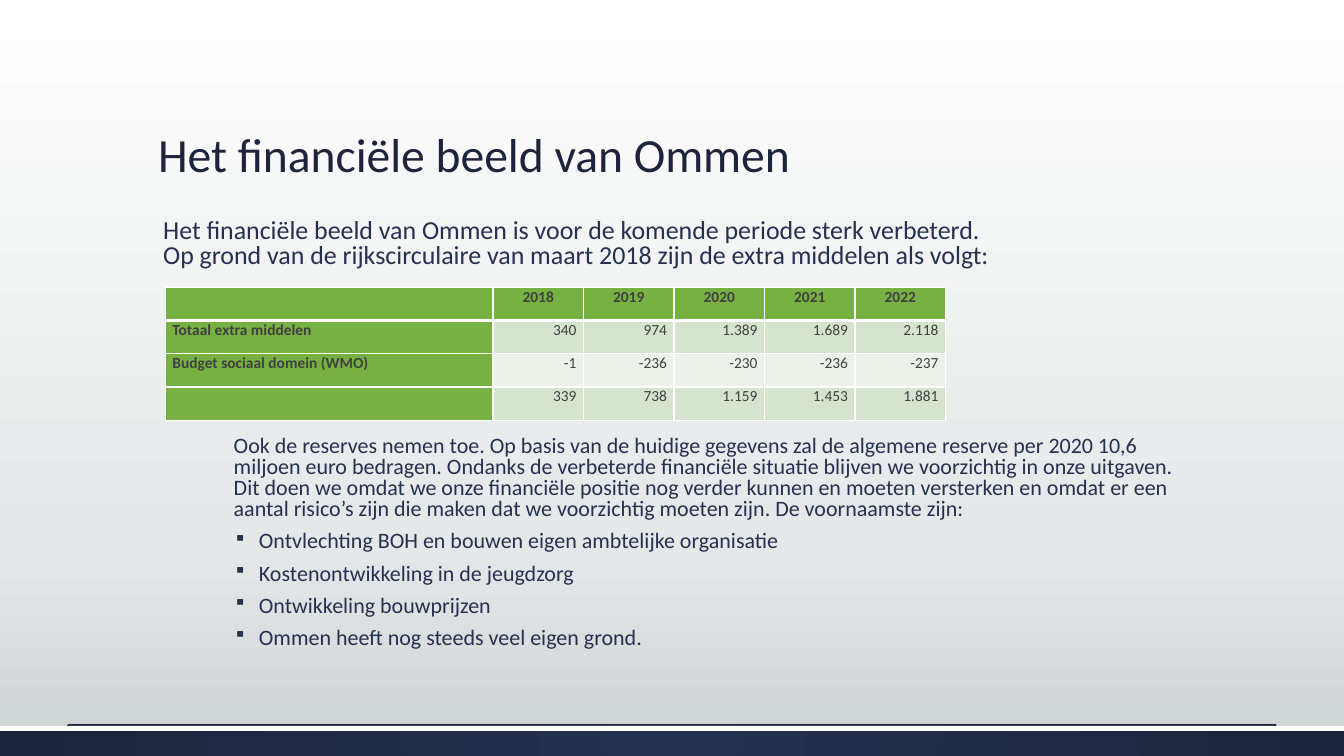
from lxml import etree
from pptx import Presentation
from pptx.dml.color import RGBColor
from pptx.enum.shapes import MSO_CONNECTOR, MSO_SHAPE
from pptx.enum.text import MSO_ANCHOR, PP_ALIGN
from pptx.oxml import parse_xml
from pptx.oxml.ns import nsdecls, qn
from pptx.util import Inches, Pt

NAVY = RGBColor(0x1D, 0x24, 0x3C)
BLUE = RGBColor(0x26, 0x30, 0x50)
WHITE = RGBColor(0xFF, 0xFF, 0xFF)
MIST = RGBColor(0xE5, 0xE8, 0xE8)
SILVER = RGBColor(0xCD, 0xD2, 0xD2)
GREEN = RGBColor(0x77, 0xB1, 0x42)
BAND_DARK = RGBColor(0xD6, 0xE4, 0xCF)
BAND_LIGHT = RGBColor(0xEC, 0xF2, 0xE9)
GREY = RGBColor(0x40, 0x40, 0x40)

LINEAR_DOWN = '<a:lin ang="5400000" scaled="0"/>'
RADIAL = '<a:path path="circle"><a:fillToRect l="50000" t="50000" r="50000" b="50000"/></a:path>'

INTRO = ("Het financiële beeld van Ommen is voor de komende periode sterk verbeterd.\v"
         "Op grond van de rijkscirculaire van maart 2018 zijn de extra middelen als volgt:")
RESERVES = ("Ook de reserves nemen toe. Op basis van de huidige gegevens zal de algemene reserve "
            "per 2020 10,6 miljoen euro bedragen. Ondanks de verbeterde financiële situatie blijven "
            "we voorzichtig in onze uitgaven. Dit doen we omdat we onze financiële positie nog verder "
            "kunnen en moeten versterken en omdat er een aantal risico’s zijn die maken dat we "
            "voorzichtig moeten zijn. De voornaamste zijn:")
RISKS = [
    "Ontvlechting BOH en bouwen eigen ambtelijke organisatie",
    "Kostenontwikkeling in de jeugdzorg",
    "Ontwikkeling bouwprijzen",
    "Ommen heeft nog steeds veel eigen grond.",
]
BUDGET = [
    ["", "2018", "2019", "2020", "2021", "2022"],
    ["Totaal extra middelen", "340", "974", "1.389", "1.689", "2.118"],
    ["Budget sociaal domein (WMO)", "-1", "-236", "-230", "-236", "-237"],
    ["", "339", "738", "1.159", "1.453", "1.881"],
]


def set_attributes(target, values):
    for name, value in values.items():
        setattr(target, name, value)


def set_gradient(fill, properties, stops, direction):
    """Fill the element with colour stops given as (percent, colour)."""
    fill.solid()
    stop_xml = "".join(f'<a:gs pos="{percent * 1000}"><a:srgbClr val="{colour}"/></a:gs>'
                       for percent, colour in stops)
    gradient = parse_xml(f'<a:gradFill {nsdecls("a")} rotWithShape="1">'
                         f'<a:gsLst>{stop_xml}</a:gsLst>{direction}</a:gradFill>')
    properties.replace(properties.find(qn("a:solidFill")), gradient)


def write_paragraph(paragraph, text, font, layout=None):
    paragraph.text = text
    set_attributes(paragraph, layout or {})
    for run in paragraph.runs:
        set_attributes(run.font, {"name": "Calibri", "size": Pt(font["size"]),
                                  "bold": font.get("bold", False)})
        run.font.color.rgb = font["colour"]


def set_indent(paragraph, left, hanging=0, bullet=None):
    properties = paragraph._p.get_or_add_pPr()
    properties.set("marL", str(Inches(left)))
    properties.set("indent", str(-Inches(hanging)))
    if bullet:
        colour = etree.SubElement(properties, qn("a:buClr"))
        etree.SubElement(colour, qn("a:srgbClr"), val=str(BLUE))
        etree.SubElement(properties, qn("a:buSzPct"), val="80000")
        etree.SubElement(properties, qn("a:buChar"), char=bullet)


def add_text_frame(slide, box, anchor=MSO_ANCHOR.TOP):
    frame = slide.shapes.add_textbox(*map(Inches, box)).text_frame
    set_attributes(frame, {"word_wrap": True, "vertical_anchor": anchor})
    return frame


def add_footer_band(slide, box):
    left, top, width, height = box
    # Dark band with a white strip along its top
    for strip_height in (height, 0.05):
        strip = slide.shapes.add_shape(MSO_SHAPE.RECTANGLE,
                                       *map(Inches, (left, top, width, strip_height)))
        strip.shadow.inherit = False
        strip.line.fill.background()
        if strip_height == height:
            set_gradient(strip.fill, strip._element.spPr, [(0, BLUE), (100, NAVY)], RADIAL)
        else:
            strip.fill.solid()
            strip.fill.fore_color.rgb = WHITE
    # Thin rule just above the band
    margin, rule_top = 0.67, top - 0.01
    rule = slide.shapes.add_connector(
        MSO_CONNECTOR.STRAIGHT, Inches(left + margin), Inches(rule_top),
        Inches(left + width - margin), Inches(rule_top))
    rule.line.color.rgb = NAVY
    rule.line.width = Pt(0.75)
    etree.SubElement(rule._element.spPr, qn("a:effectLst"))


def add_title(slide, box):
    frame = add_text_frame(slide, box, MSO_ANCHOR.BOTTOM)
    write_paragraph(frame.paragraphs[0], "Het financiële beeld van Ommen",
                    {"size": 34, "colour": NAVY}, {"line_spacing": 0.9})


def add_intro(slide, box):
    paragraph = add_text_frame(slide, box).paragraphs[0]
    write_paragraph(paragraph, INTRO, {"size": 18.5, "colour": BLUE}, {"line_spacing": 0.8})
    set_indent(paragraph, 0.05)


def add_risks(slide, box):
    frame = add_text_frame(slide, box)
    font = {"size": 15.7, "colour": BLUE}
    write_paragraph(frame.paragraphs[0], RESERVES, font, {"line_spacing": 0.8})
    set_indent(frame.paragraphs[0], 0.75)
    for risk in RISKS:
        paragraph = frame.add_paragraph()
        write_paragraph(paragraph, risk, font, {"line_spacing": 0.8, "space_before": Pt(8)})
        set_indent(paragraph, 1, 0.25, "▪")


def set_borders(cell, widths):
    properties = cell._tc.get_or_add_tcPr()
    for position, (side, width) in enumerate(widths.items()):
        properties.insert(position, parse_xml(
            f'<a:ln{side} {nsdecls("a")} w="{Pt(width)}">'
            f'<a:solidFill><a:srgbClr val="{WHITE}"/></a:solidFill></a:ln{side}>'))


def add_budget_table(slide, box):
    frame = slide.shapes.add_table(len(BUDGET), len(BUDGET[0]), *map(Inches, box))
    table = frame.table
    set_attributes(table, {"first_row": False, "horz_banding": False})
    label_width = 3.25
    year_width = (box[2] - label_width) / (len(BUDGET[0]) - 1)
    for index, column in enumerate(table.columns):
        column.width = Inches(year_width if index else label_width)
    for row, values in enumerate(BUDGET):
        for column, value in enumerate(values):
            cell = table.cell(row, column)
            set_attributes(cell, {"margin_left": Inches(0.07), "margin_right": Inches(0.07),
                                  "margin_top": 0, "margin_bottom": 0})
            heading = row == 0 or column == 0
            cell.fill.solid()
            cell.fill.fore_color.rgb = GREEN if heading else BAND_DARK if row % 2 else BAND_LIGHT
            set_borders(cell, {"L": 1, "R": 1, "T": 3 if row == 1 else 1,
                               "B": 3 if row == 0 else 1})
            alignment = (PP_ALIGN.LEFT if column == 0 else
                         PP_ALIGN.CENTER if row == 0 else PP_ALIGN.RIGHT)
            write_paragraph(cell.text_frame.paragraphs[0], value,
                            {"size": 11, "colour": GREY, "bold": heading},
                            {"alignment": alignment})


def build_finance_slide(presentation):
    slide = presentation.slides.add_slide(presentation.slide_layouts[6])
    background_fill = slide.background.fill
    background_fill.solid()
    set_gradient(background_fill, slide._element.find(".//" + qn("p:bgPr")),
                 [(0, WHITE), (72, MIST), (100, SILVER)], LINEAR_DOWN)
    add_footer_band(slide, (0, 7.2, 13.33, 0.3))
    add_title(slide, (1.47, 0.51, 10.4, 1.35))
    add_intro(slide, (1.47, 2.13, 10.4, 0.65))
    add_budget_table(slide, (1.64, 2.85, 7.74, 1.32))
    add_risks(slide, (1.47, 4.28, 10.4, 2.36))


def main():
    presentation = Presentation()
    set_attributes(presentation, {"slide_width": Inches(13.33), "slide_height": Inches(7.5)})
    build_finance_slide(presentation)
    presentation.save("out.pptx")


if __name__ == "__main__":
    main()
